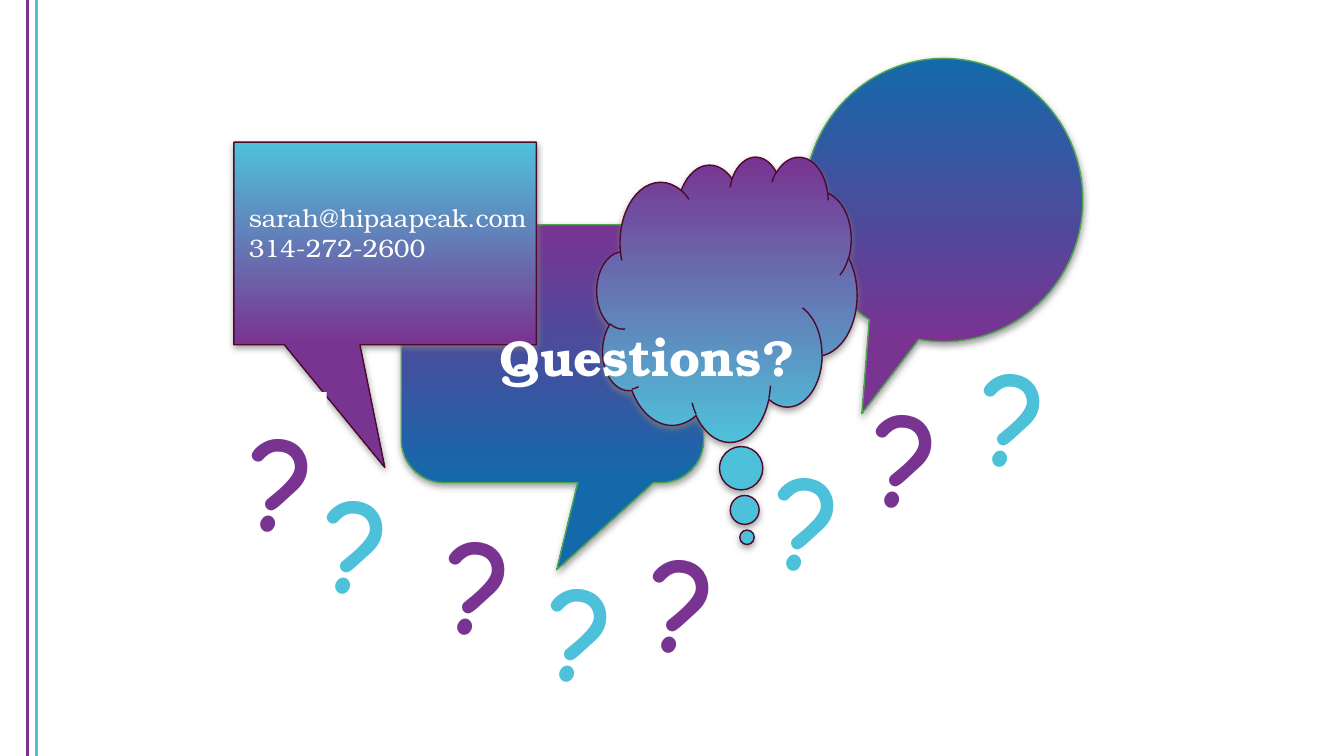
"""Build a closing Questions slide with speech bubbles and question marks."""
from itertools import cycle

from lxml.etree import SubElement
from pptx import Presentation
from pptx.dml.color import RGBColor
from pptx.enum.shapes import MSO_CONNECTOR, MSO_SHAPE
from pptx.enum.text import MSO_ANCHOR, MSO_AUTO_SIZE, PP_ALIGN
from pptx.oxml import parse_xml
from pptx.oxml.ns import nsdecls, qn
from pptx.util import Inches, Pt

COLORS = {
    "purple": "793391", "cyan": "4EC1DA", "blue": "1369AA", "green": "4EA64E",
    "maroon": "50092D", "white": "FFFFFF", "shade": "808080",
}
RGB = {name: RGBColor.from_string(value) for name, value in COLORS.items()}
COLUMNS, ROWS = 1333, 750

deck = Presentation()
deck.slide_width, deck.slide_height = Inches(13.33), Inches(7.5)
column, row = deck.slide_width // COLUMNS, deck.slide_height // ROWS
slide = deck.slides.add_slide(deck.slide_layouts[6])
shapes = slide.shapes


def cells(left, top, width, height):
    return left * column, top * row, width * column, height * row


def write(area, text, font_name, size, color, bold=False, align=PP_ALIGN.LEFT):
    words = shapes.add_textbox(*cells(*area))
    frame = words.text_frame
    frame.word_wrap = True
    frame.vertical_anchor = MSO_ANCHOR.TOP
    frame.text = text
    for paragraph in frame.paragraphs:
        paragraph.alignment = align
        for run in paragraph.runs:
            run.font.name = font_name
            run.font.size = Pt(size)
            run.font.bold = bold
            run.font.color.rgb = RGB[color]
    return words


bubbles = [
    (MSO_SHAPE.OVAL_CALLOUT, (798, 58, 276, 281), (-0.294, 0.754), "blue", "purple", "green"),
    (MSO_SHAPE.ROUNDED_RECTANGULAR_CALLOUT, (398, 223, 300, 256), (0.014, 0.837, 0.167),
     "purple", "blue", "green"),
    (MSO_SHAPE.RECTANGULAR_CALLOUT, (232, 141, 300, 201), (-0.001, 1.106),
     "cyan", "purple", "maroon"),
    (MSO_SHAPE.CLOUD_CALLOUT, (592, 155, 258, 283), (0.077, 0.836), "purple", "cyan", "maroon"),
]
for outline, area, tail, upper, lower, edge in bubbles:
    bubble = shapes.add_shape(outline, *cells(*area))
    for index, share in enumerate(tail):
        bubble.adjustments[index] = share
    bubble.fill.gradient()
    bubble.fill.gradient_angle = 270
    for stop, tone, position in zip(bubble.fill.gradient_stops, (upper, lower), (0, 1)):
        stop.color.rgb = RGB[tone]
        stop.position = position
    bubble.line.color.rgb = RGB[edge]
    bubble.line.width = Pt(1)
    bubble.shadow.inherit = False
    effects = bubble.element.spPr.find(qn("a:effectLst"))
    effects.append(parse_xml(
        f'<a:outerShdw {nsdecls("a")} blurRad="{Pt(5)}" dist="{Pt(2)}" dir="5400000" '
        f'rotWithShape="0"><a:srgbClr val="{COLORS["shade"]}"><a:alpha val="75000"/>'
        '</a:srgbClr></a:outerShdw>'))

write((229, 319, 826, 122), "Questions?", "TeX Gyre Bonum", 36, "white", True, PP_ALIGN.CENTER)

mark_corners = [(238, 389), (312, 451), (433, 491), (534, 538),
                (635, 509), (759, 428), (857, 365), (964, 325)]
for corner, tone in zip(mark_corners, cycle(("purple", "cyan"))):
    mark = write((*corner, 86, 172), "?", "Comic Neue", 96, tone, True)
    mark.text_frame.auto_size = MSO_AUTO_SIZE.SHAPE_TO_FIT_TEXT
    if corner == mark_corners[0]:
        mark.fill.solid()
        mark.fill.fore_color.rgb = RGB["white"]

for offset, tone in ((27, "purple"), (36, "cyan")):
    stripe = shapes.add_connector(
        MSO_CONNECTOR.STRAIGHT, offset * column, 0, offset * column, deck.slide_height)
    stripe.line.color.rgb = RGB[tone]
    stripe.line.width = Pt(2)
    SubElement(stripe.element.spPr, qn("a:effectLst"))

contact = write((237, 196, 297, 71), "sarah@hipaapeak.com\n314-272-2600",
                "TeX Gyre Bonum", 18, "white")
contact.text_frame.auto_size = MSO_AUTO_SIZE.SHAPE_TO_FIT_TEXT

deck.save("out.pptx")
